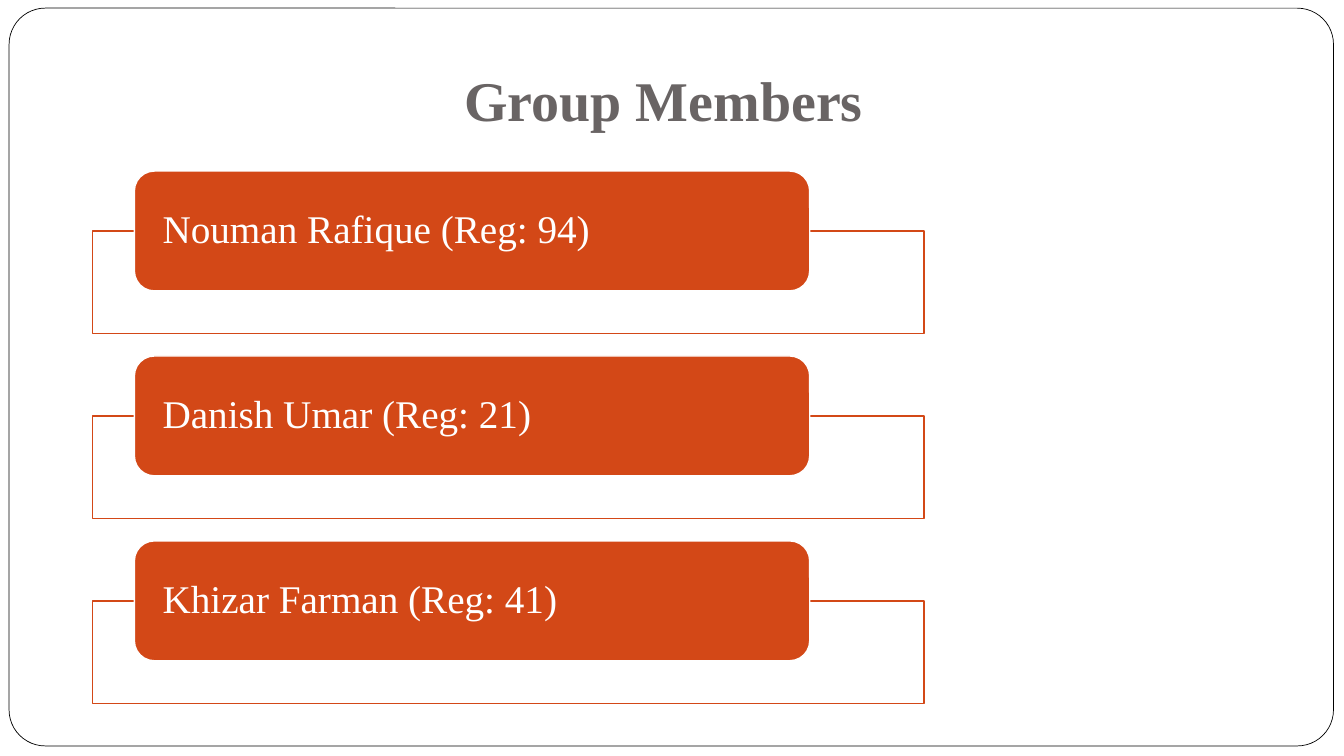
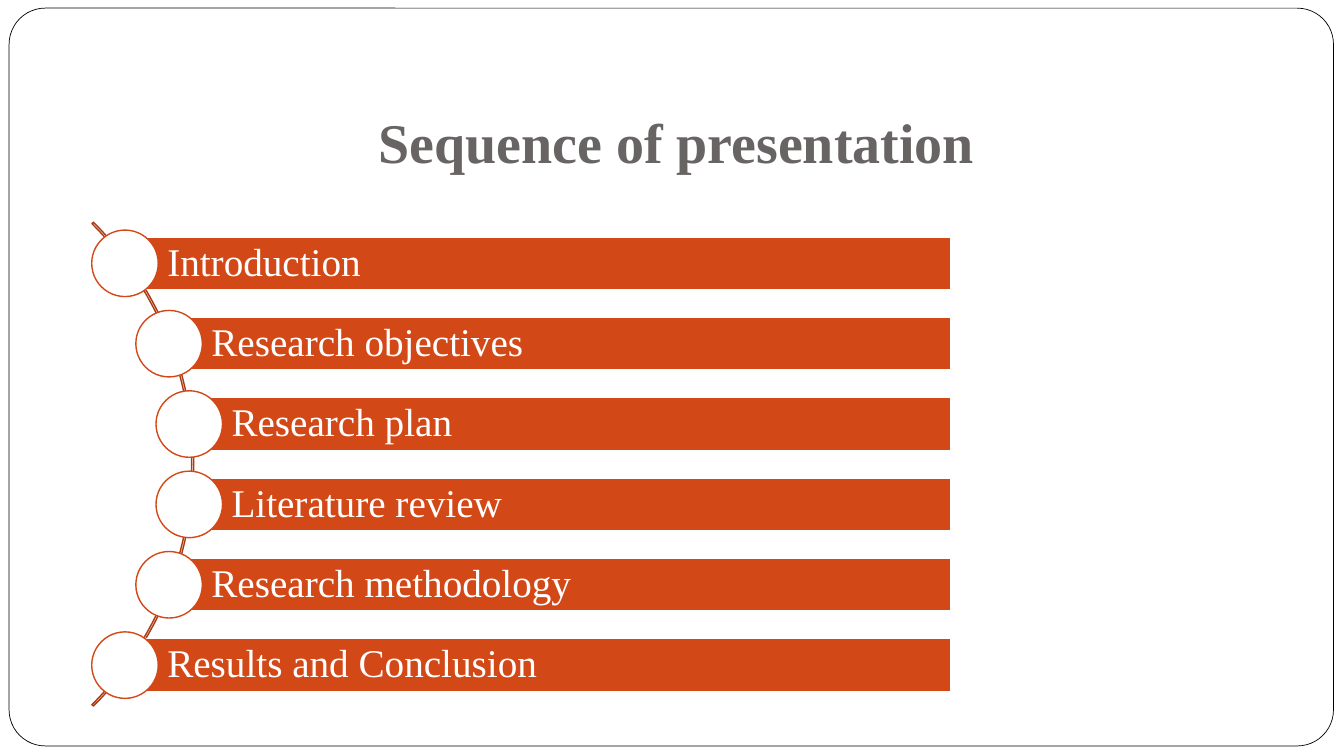
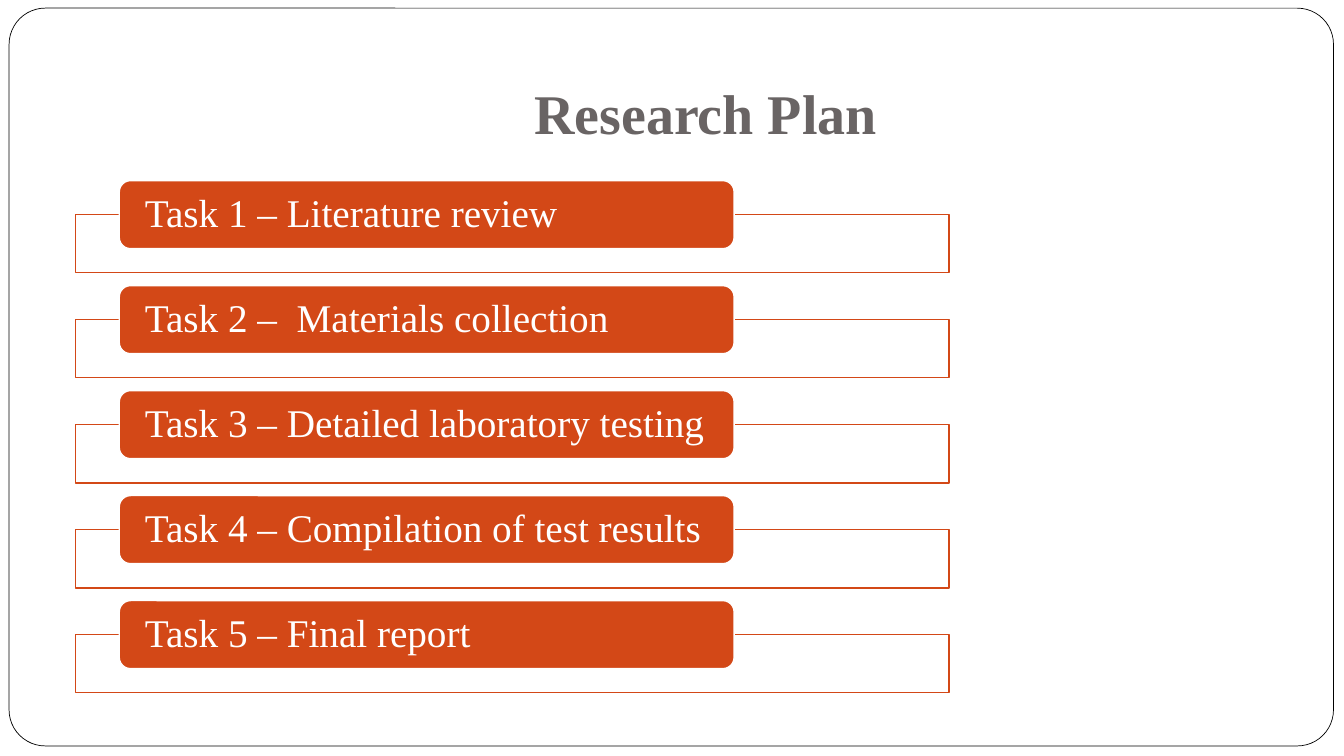
from dataclasses import dataclass

from pptx import Presentation
from pptx.dml.color import RGBColor
from pptx.enum.shapes import MSO_SHAPE
from pptx.enum.text import MSO_ANCHOR, PP_ALIGN
from pptx.util import Pt

RECTANGLE = MSO_SHAPE.RECTANGLE
ROUNDED = MSO_SHAPE.ROUNDED_RECTANGLE
OVAL = MSO_SHAPE.OVAL
BLOCK_ARC = MSO_SHAPE.BLOCK_ARC
MIDDLE = MSO_ANCHOR.MIDDLE
BOTTOM = MSO_ANCHOR.BOTTOM
LEFT = PP_ALIGN.LEFT
CENTER = PP_ALIGN.CENTER


@dataclass(frozen=True)
class Theme:
    font: str = "Times New Roman"
    title_size: int = 40
    item_size: int = 28
    white: RGBColor = RGBColor.from_string("FFFFFF")
    black: RGBColor = RGBColor.from_string("000000")
    gray: RGBColor = RGBColor.from_string("696464")
    orange: RGBColor = RGBColor.from_string("D34817")
    rust: RGBColor = RGBColor.from_string("A93A12")


class Deck:
    def __init__(self, theme):
        self.theme = theme
        self.presentation = Presentation()
        self.presentation.slide_width = Pt(960)
        self.presentation.slide_height = Pt(540)
        self.slide = None

    def add_slide(self, title, title_box):
        theme = self.theme
        self.slide = self.presentation.slides.add_slide(self.presentation.slide_layouts[6])
        border = self.add_shape(ROUNDED, (6.5, 5.8, 946, 527), theme.white, theme.black, 0.5)
        border.adjustments[0] = 0.049
        text_box = self.slide.shapes.add_textbox(*map(Pt, title_box))
        paragraph = self.set_text(text_box, title, (7.2, 3.6, 7.2, 7.2), BOTTOM,
                                  theme.title_size, theme.gray)
        paragraph.font.bold = True
        paragraph.alignment = CENTER

    def add_shape(self, kind, box, fill, line, line_width=1):
        shape = self.slide.shapes.add_shape(kind, *map(Pt, box))
        shape.shadow.inherit = False
        if fill is None:
            shape.fill.background()
        else:
            shape.fill.solid()
            shape.fill.fore_color.rgb = fill
        shape.line.color.rgb = line
        shape.line.width = Pt(line_width)
        return shape

    def set_text(self, shape, text, insets, anchor, size, color):
        frame = shape.text_frame
        frame.word_wrap = True
        frame.vertical_anchor = anchor
        (frame.margin_left, frame.margin_top,
         frame.margin_right, frame.margin_bottom) = map(Pt, insets)
        paragraph = frame.paragraphs[0]
        paragraph.text = text
        paragraph.alignment = LEFT
        paragraph.font.name = self.theme.font
        paragraph.font.size = Pt(size)
        paragraph.font.color.rgb = color
        return paragraph

    def add_label(self, kind, box, text, inset):
        theme = self.theme
        shape = self.add_shape(kind, box, theme.orange, theme.white)
        paragraph = self.set_text(shape, text, (inset, 0, 0, 0), MIDDLE,
                                  theme.item_size, theme.white)
        paragraph.line_spacing = 0.9

    def add_box_list(self, items, first_box, pitch, label_left, label_width, label_height):
        left, first_top, width, height = first_box
        for index, item in enumerate(items):
            top = first_top + index * pitch
            self.add_shape(RECTANGLE, (left, top, width, height),
                           self.theme.white, self.theme.orange)
            label_box = (label_left, top - label_height / 2, label_width, label_height)
            self.add_label(ROUNDED, label_box, item, 16)

    def add_curved_list(self, items, lefts, right, first_top, pitch, bar_height, circle_size):
        arc = self.add_shape(BLOCK_ARC, (-350.6, 87.1, 488.9, 488.9), None, self.theme.rust)
        for index, value in enumerate((189, 27, 0.003)):
            arc.adjustments[index] = value
        for index, (item, left) in enumerate(zip(items, lefts)):
            top = first_top + index * pitch
            self.add_label(RECTANGLE, (left, top, right - left, bar_height), item, 30.2)
            circle_top = top + (bar_height - circle_size) / 2
            self.add_shape(OVAL, (left - circle_size / 2, circle_top, circle_size, circle_size),
                           self.theme.white, self.theme.orange)


def main():
    deck = Deck(Theme())

    deck.add_slide("Group Members", (66, 12, 816, 90))
    deck.add_box_list(
        ("Nouman Rafique (Reg: 94)", "Danish Umar (Reg: 21)", "Khizar Farman (Reg: 41)"),
        first_box=(66, 165, 594, 73.4), pitch=132.1,
        label_left=96, label_width=482.4, label_height=85.6)

    deck.add_slide("Sequence of presentation", (48, 48, 870, 84))
    half_curve = (89.3, 120.8, 135.2)
    deck.add_curved_list(
        ("Introduction", "Research objectives", "Research plan",
         "Literature review", "Research methodology", "Results and Conclusion"),
        lefts=half_curve + half_curve[::-1], right=679, first_top=169.2, pitch=57.4,
        bar_height=37.8, circle_size=47.5)

    deck.add_slide("Research Plan", (96, 21.6, 816, 90))
    tasks = ("Literature review", " Materials collection", "Detailed laboratory testing",
             "Compilation of test results", "Final report")
    deck.add_box_list(
        [f"Task {number} – {task}" for number, task in enumerate(tasks, 1)],
        first_box=(54, 153.3, 624, 41.6), pitch=75,
        label_left=85.2, label_width=439.2, label_height=48.6)

    deck.presentation.save("out.pptx")


if __name__ == "__main__":
    main()
